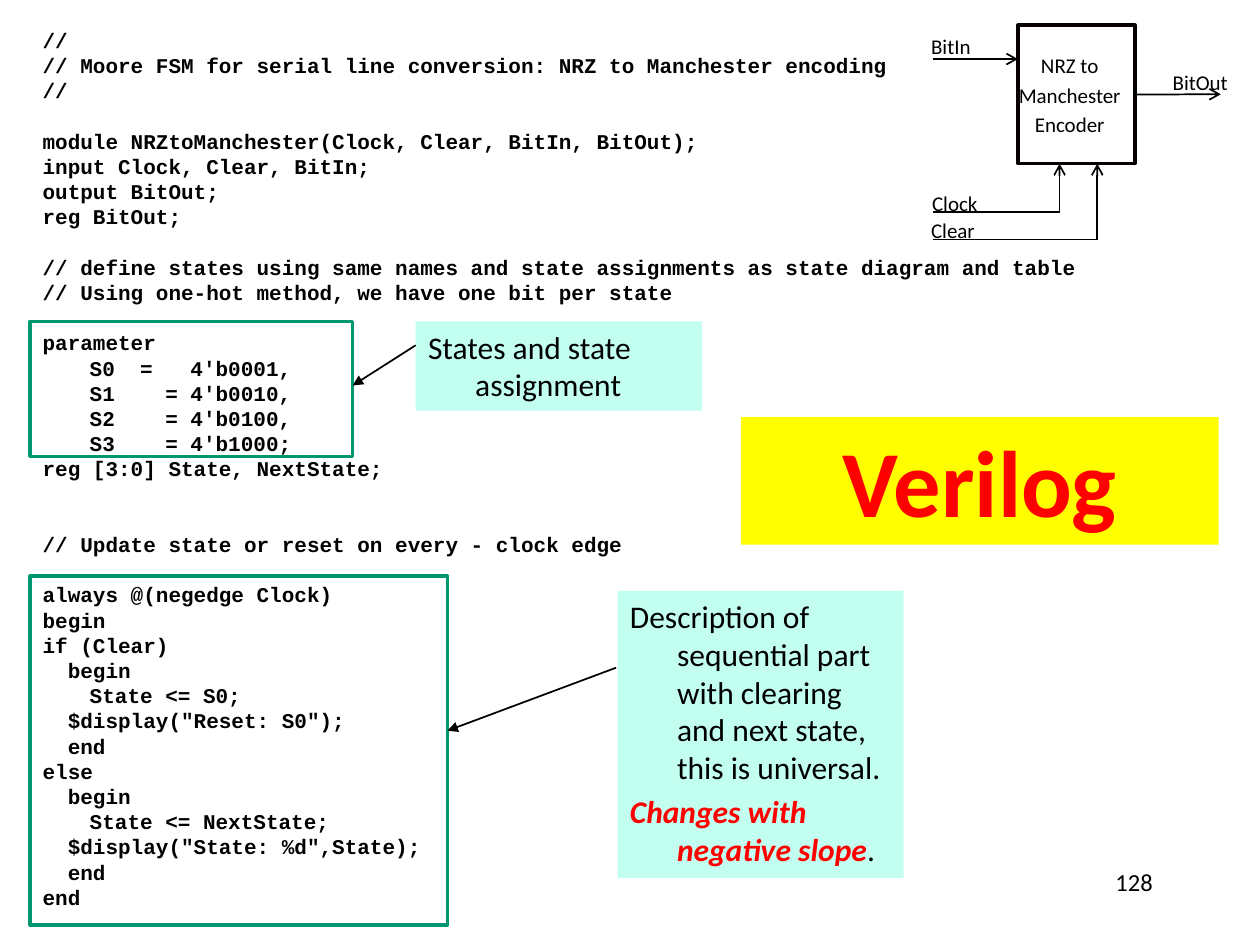
"""Builds the Verilog slide for the NRZ to Manchester encoder."""
from dataclasses import dataclass
from typing import Optional

import lxml.etree
import pptx
import pptx.dml.color
import pptx.enum.shapes
import pptx.enum.text
import pptx.oxml.ns
import pptx.util

Cm = pptx.util.Cm
Pt = pptx.util.Pt
Align = pptx.enum.text.PP_ALIGN
Point = tuple[float, float]


@dataclass(frozen=True)
class Theme:
    ink: str = "000000"
    block: str = "060000"
    frame: str = "009771"
    callout: str = "C2FFF0"
    banner: str = "FFFF00"
    alert: str = "FF0000"
    body_font: str = "Calibri"
    code_font: str = "Courier New"
    small: float = 12
    number: float = 14
    note: float = 18
    title: float = 54
    code_line: float = 14.4
    hang: float = 0.95
    frame_width: float = 2
    wire_width: float = 1


THEME = Theme()


@dataclass(frozen=True)
class Area:
    left: float
    top: float
    width: float
    height: float

    def lengths(self) -> list[pptx.util.Length]:
        return [Cm(value) for value in (self.left, self.top, self.width, self.height)]


@dataclass(frozen=True)
class Style:
    size: float = THEME.small
    font: str = THEME.body_font
    color: str = THEME.ink
    bold: bool = False
    italic: bool = False


@dataclass(frozen=True)
class Box:
    area: Area
    paragraphs: tuple[str, ...] = ()
    style: Style = Style()
    align: Align = Align.LEFT
    wrap: bool = True
    fill: Optional[str] = None
    line: Optional[str] = None
    hang: float = THEME.hang


@dataclass(frozen=True)
class Wire:
    start: Point
    end: Point
    head: Optional[str] = None


CODE_BLOCKS = (
    """//
// Moore FSM for serial line conversion: NRZ to Manchester encoding
//""",
    """module NRZtoManchester(Clock, Clear, BitIn, BitOut);
input Clock, Clear, BitIn;
output BitOut;
reg BitOut;""",
    """// define states using same names and state assignments as state diagram and table
// Using one-hot method, we have one bit per state""",
    """parameter
\tS0  =   4'b0001,
\tS1    = 4'b0010,
\tS2    = 4'b0100,
\tS3    = 4'b1000;
reg [3:0] State, NextState;""",
    "// Update state or reset on every - clock edge",
    """always @(negedge Clock)
begin
if (Clear)
  begin
\tState <= S0;
  $display("Reset: S0");
  end
else
  begin
\tState <= NextState;
  $display("State: %d",State);
  end
end""",
)
BLOCK_GAPS = (0, 1, 1, 1, 2, 1)

CODE = Style(font=THEME.code_font, bold=True)
NOTE = Style(THEME.note)
WARNING = Style(THEME.note, color=THEME.alert, bold=True, italic=True)
TITLE = Style(THEME.title, color=THEME.alert, bold=True)

NUMBER = Box(Area(18.21, 17.35, 5.28, 1.27), ("128",), Style(THEME.number), Align.RIGHT, hang=0)
LISTING = Box(Area(0.61, 0.43, 23.95, 18.21))
BANNER = Box(Area(14.94, 8.41, 9.63, 2.57), ("Verilog",), TITLE, Align.CENTER, fill=THEME.banner)
FRAMES = (
    Box(Area(0.61, 6.48, 6.5, 2.72), line=THEME.frame),
    Box(Area(0.61, 11.61, 8.41, 7.04), line=THEME.frame),
)
STATES = Box(Area(8.38, 6.48, 5.77, 1.8), ("States and state assignment",), NOTE, fill=THEME.callout)
SEQUENTIAL = Box(
    Area(12.45, 11.91, 5.77, 5.79),
    ("Description of sequential part with clearing and next state, this is universal.",),
    NOTE,
    fill=THEME.callout,
)
ENCODER = Box(Area(20.52, 0.51, 2.36, 2.79), line=THEME.block)
LABELS = (
    Box(Area(18.52, 0.56, 1.32, 0.76), ("BitIn",), wrap=False),
    Box(Area(18.54, 3.71, 1.45, 0.76), ("Clock",), wrap=False),
    Box(Area(18.52, 4.27, 1.4, 0.76), ("Clear",), wrap=False),
    Box(Area(23.39, 1.27, 1.63, 0.76), ("BitOut",), wrap=False),
    Box(Area(20.27, 0.94, 2.59, 2.01), ("NRZ to", "Manchester", "Encoder"), align=Align.CENTER, wrap=False),
)
WIRES = (
    Wire((8.38, 6.96), (7.11, 7.77), "triangle"),
    Wire((12.42, 13.46), (9.02, 14.73), "triangle"),
    Wire((18.8, 1.19), (20.52, 1.19), "arrow"),
    Wire((21.36, 4.27), (21.36, 3.3), "arrow"),
    Wire((22.12, 4.83), (22.12, 3.3), "arrow"),
    Wire((21.36, 4.27), (18.8, 4.27)),
    Wire((22.12, 4.83), (18.8, 4.83)),
)
OUTPUT = Wire((22.88, 1.9), (24.61, 1.9), "arrow")


def rgb(color: str) -> pptx.dml.color.RGBColor:
    return pptx.dml.color.RGBColor.from_string(color)


def set_font(font, style: Style) -> None:
    font.name, font.size = style.font, Pt(style.size)
    font.bold, font.italic = style.bold, style.italic
    font.color.rgb = rgb(style.color)


def format_paragraph(para, box: Box, gap: float) -> None:
    properties = para._p.get_or_add_pPr()
    properties.set("marL", str(Cm(box.hang)))
    properties.set("indent", str(-Cm(box.hang)))
    para.alignment = box.align
    if gap:
        para.space_before = Pt(gap)


def draw_box(page, box: Box):
    if box.fill or box.line:
        shape = page.shapes.add_shape(pptx.enum.shapes.MSO_SHAPE.RECTANGLE, *box.area.lengths())
        shape.shadow.inherit = False
    else:
        shape = page.shapes.add_textbox(*box.area.lengths())
    if box.fill:
        shape.fill.solid()
        shape.fill.fore_color.rgb = rgb(box.fill)
    else:
        shape.fill.background()
    if box.line:
        shape.line.color.rgb = rgb(box.line)
        shape.line.width = Pt(THEME.frame_width)
    else:
        shape.line.fill.background()
    frame = shape.text_frame
    frame.word_wrap = box.wrap
    frame.vertical_anchor = pptx.enum.text.MSO_ANCHOR.TOP
    for index, text in enumerate(box.paragraphs):
        para = frame.add_paragraph() if index else frame.paragraphs[0]
        format_paragraph(para, box, box.style.size * 0.2 if index else 0)
        para.add_run().text = text
        set_font(para.font, box.style)
    return shape


def draw_listing(page) -> None:
    frame = draw_box(page, LISTING).text_frame
    para = frame.paragraphs[0]
    for block, gap in zip(CODE_BLOCKS, BLOCK_GAPS):
        for index, text in enumerate(block.splitlines()):
            if para.runs:
                para = frame.add_paragraph()
            format_paragraph(para, LISTING, 0 if index else gap * THEME.code_line)
            para.line_spacing = Pt(THEME.code_line)
            para.add_run().text = text
            set_font(para.font, CODE)


def draw_warning(shape) -> None:
    para = shape.text_frame.add_paragraph()
    format_paragraph(para, SEQUENTIAL, THEME.note * 0.2)
    for text, style in (("Changes with negative slope", WARNING), (".", NOTE)):
        span = para.add_run()
        span.text = text
        set_font(span.font, style)


def draw_wire(page, wire: Wire):
    ends = [Cm(value) for value in wire.start + wire.end]
    connector = page.shapes.add_connector(pptx.enum.shapes.MSO_CONNECTOR.STRAIGHT, *ends)
    connector.line.color.rgb = rgb(THEME.ink)
    connector.line.width = Pt(THEME.wire_width)
    qualify = pptx.oxml.ns.qn
    if wire.head:
        lxml.etree.SubElement(connector.line._get_or_add_ln(), qualify("a:tailEnd"), type=wire.head)
    lxml.etree.SubElement(connector._element.spPr, qualify("a:effectLst"))
    return connector


def main() -> None:
    deck = pptx.Presentation()
    deck.slide_width, deck.slide_height = Cm(25.4), Cm(19.05)
    page = deck.slides.add_slide(deck.slide_layouts[6])
    draw_box(page, NUMBER)
    draw_listing(page)
    for box in (BANNER, *FRAMES, STATES):
        draw_box(page, box)
    draw_warning(draw_box(page, SEQUENTIAL))
    encoder = draw_box(page, ENCODER)
    for wire in WIRES:
        draw_wire(page, wire)
    draw_wire(page, OUTPUT).begin_connect(encoder, 3)
    for label in LABELS:
        draw_box(page, label)
    deck.save("out.pptx")


if __name__ == "__main__":
    main()
